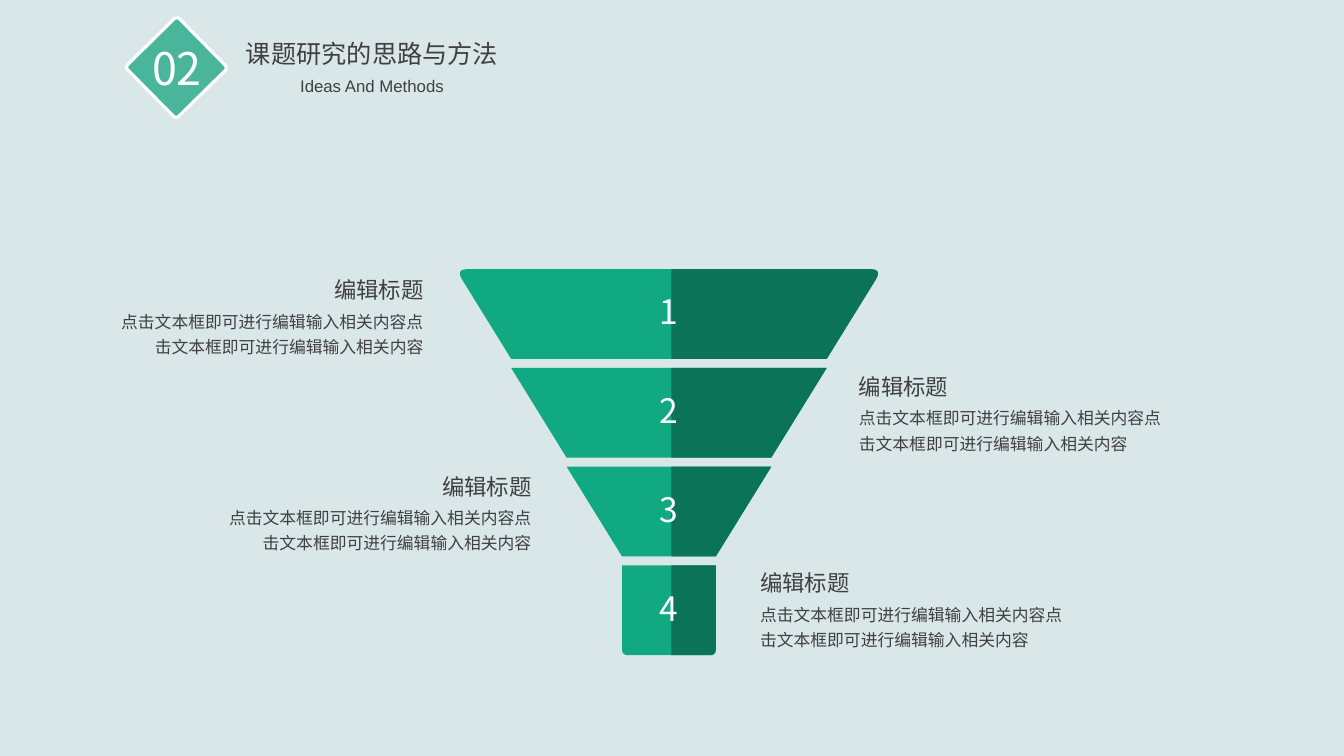
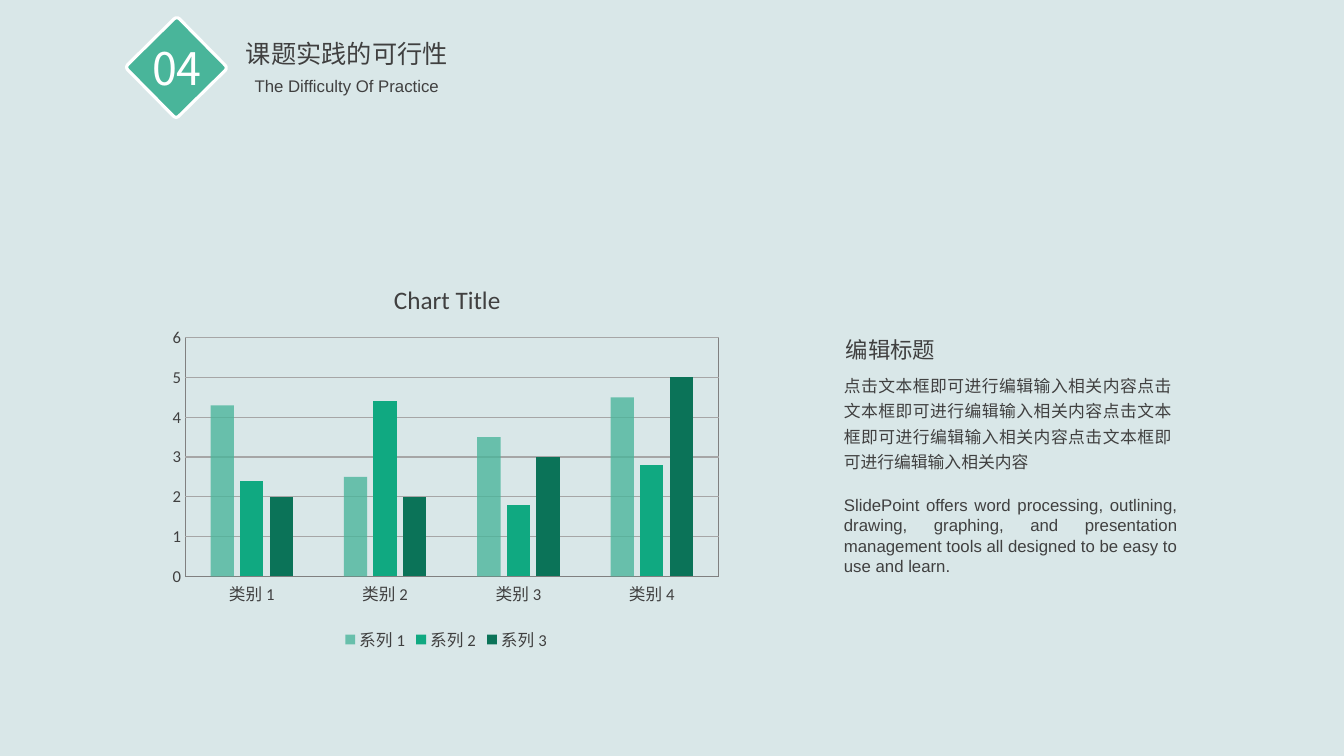
from dataclasses import dataclass

from pptx import Presentation
from pptx.chart.data import CategoryChartData
from pptx.dml.color import RGBColor
from pptx.enum.chart import XL_CHART_TYPE, XL_LEGEND_POSITION, XL_TICK_MARK
from pptx.enum.shapes import MSO_SHAPE
from pptx.enum.text import MSO_ANCHOR, MSO_AUTO_SIZE, PP_ALIGN
from pptx.oxml import parse_xml
from pptx.oxml.ns import nsdecls, qn
from pptx.util import Pt

PX = 9144  # EMU per px, 100 px to the inch
LEFT, CENTER, RIGHT, JUSTIFY = PP_ALIGN.LEFT, PP_ALIGN.CENTER, PP_ALIGN.RIGHT, PP_ALIGN.JUSTIFY
TOP, MIDDLE = MSO_ANCHOR.TOP, MSO_ANCHOR.MIDDLE
NO_FIT = MSO_AUTO_SIZE.NONE
ROUND_RECT = MSO_SHAPE.ROUNDED_RECTANGLE
CLUSTERED = XL_CHART_TYPE.COLUMN_CLUSTERED
LEGEND_BOTTOM = XL_LEGEND_POSITION.BOTTOM
NO_TICK = XL_TICK_MARK.NONE
TITLE_ONLY = 5


@dataclass(frozen=True)
class Theme:
    # Colours
    background: str = "D9E7E8"
    mint: str = "49B59A"
    green: str = "10A981"
    dark: str = "0B7358"
    ink: str = "404040"
    white: str = "FFFFFF"
    axis: str = "808080"
    grid: str = "A6A6A6"
    # Fonts
    cjk: str = "Noto Sans CJK SC"
    latin: str = "Arial"
    chart: str = "Calibri"
    # Type sizes
    number: int = 32
    tier: int = 24
    title: int = 18
    heading: int = 16
    body: int = 12
    axis_size: float = 11.9


THEME = Theme()
PROMPT = "点击文本框即可进行编辑输入相关内容"
HEADING = "编辑标题"


def rgb(value):
    return RGBColor.from_string(value)


def rounded(corners, steps=8):
    """Outline of (x, y, cut) corners, each cut replaced by a quadratic curve."""
    points = []
    for i, (x, y, cut) in enumerate(corners):
        if not cut:
            points.append((x, y))
            continue
        ends = []
        for nx, ny, _ in (corners[i - 1], corners[(i + 1) % len(corners)]):
            ratio = cut / ((nx - x) ** 2 + (ny - y) ** 2) ** 0.5
            ends.append((x + (nx - x) * ratio, y + (ny - y) * ratio))
        (ax, ay), (bx, by) = ends
        for k in range(steps + 1):
            t = k / steps
            a, m, b = (1 - t) ** 2, 2 * t * (1 - t), t * t
            points.append((a * ax + m * x + b * bx, a * ay + m * y + b * by))
    return points


def set_layout(parent, index, target="", **fractions):
    """Place a chart part by fractions of the chart area."""
    for old in parent.findall(qn("c:layout")):
        parent.remove(old)
    modes = "".join(f'<c:{k}Mode val="edge"/>' for k in "xy")
    values = "".join(f'<c:{k} val="{v}"/>' for k, v in fractions.items())
    parent.insert(index, parse_xml(
        f'<c:layout {nsdecls("c")}><c:manualLayout>{target}{modes}{values}'
        '</c:manualLayout></c:layout>'))


class Deck:
    def __init__(self, theme):
        self.theme = theme
        self.prs = Presentation()
        self.prs.slide_width, self.prs.slide_height = 1333 * PX, 750 * PX
        fill = self.prs.slide_master.background.fill
        fill.solid()
        fill.fore_color.rgb = rgb(theme.background)
        self.slide = None

    # Text
    def set_text(self, tf, text, size, color=None, font=None, align=LEFT,
                 spacing=1.0, before=0, anchor=TOP):
        tf.word_wrap = True
        tf.auto_size = NO_FIT
        tf.vertical_anchor = anchor
        p = tf.paragraphs[0]
        p.alignment, p.line_spacing, p.space_before = align, spacing, Pt(before)
        r = p.add_run()
        r.text = text
        r.font.size = Pt(size)
        r.font.name = font or self.theme.cjk
        r.font.color.rgb = rgb(color or self.theme.ink)
        ea = parse_xml(f'<a:ea {nsdecls("a")} typeface="{self.theme.cjk}"/>')
        r.font._element.find(qn("a:latin")).addnext(ea)

    def text(self, x, y, w, h, text, size, inset=True, **style):
        sp = self.slide.shapes.add_textbox(x * PX, y * PX, w * PX, h * PX)
        tf = sp.text_frame
        if not inset:
            tf.margin_left = tf.margin_right = tf.margin_top = tf.margin_bottom = 0
        self.set_text(tf, text, size, **style)

    def caption(self, x, y, align):
        """Heading with a two-line body under it, in a column 335 wide."""
        t = self.theme
        heading_x = x + 335 - 141 if align == RIGHT else x
        self.text(x, y + 30, 335, 61, PROMPT * 2, t.body, align=align, spacing=1.25)
        self.text(heading_x, y, 141, 37, HEADING, t.heading, align=align)

    # Slide with its numbered header
    def new_slide(self, number, title, subtitle, center):
        t = self.theme
        self.slide = self.prs.slides.add_slide(self.prs.slide_layouts[TITLE_ONLY])
        sp = self.slide.shapes.add_shape(ROUND_RECT, 139 * PX, 31 * PX, 72 * PX, 72 * PX)
        sp.adjustments[0] = 0.05
        sp.rotation = 45.4
        sp.shadow.inherit = False
        sp.fill.solid()
        sp.fill.fore_color.rgb = rgb(t.mint)
        sp.line.color.rgb = rgb(t.white)
        sp.line.width = Pt(2.25)
        self.text(137, 35, 77, 64, number, t.number, color=t.white, align=CENTER)

        sp = self.slide.shapes.title
        sp.left, sp.top, sp.width, sp.height = (
            (center - 271) * PX, 33 * PX, 542 * PX, 40 * PX)
        self.set_text(sp.text_frame, title, t.title, align=CENTER)
        self.text(center - 274, 70, 548, 30, subtitle, t.body, font=t.latin, align=CENTER)

    # Shapes
    def outline(self, corners, color):
        points = [(round(x * PX), round(y * PX)) for x, y in rounded(corners)]
        builder = self.slide.shapes.build_freeform(*points[0], scale=1.0)
        builder.add_line_segments(points[1:], close=True)
        sp = builder.convert_to_shape()
        sp.shadow.inherit = False
        sp.fill.solid()
        sp.fill.fore_color.rgb = rgb(color)
        sp.line.fill.background()

    def funnel(self, left, right, fold, top, count):
        """Tiers that narrow by one step each; the last one is straight."""
        t = self.theme
        step, pitch, height = 55, 98, 89
        for i in range(count):
            last = i == count - 1
            y = top + i * pitch
            bottom = y + height
            x1, x2 = left + i * step, right - i * step
            inset = 0 if last else step
            top_cut, bottom_cut = (0 if i else 12), (6 if last else 0)
            right_side = [(x2, y, top_cut), (x2 - inset, bottom, bottom_cut)]
            self.outline([(x1, y, top_cut), *right_side,
                          (x1 + inset, bottom, bottom_cut)], t.green)
            self.outline([(fold, y, 0), *right_side, (fold, bottom, 0)], t.dark)
            self.text(614, y, 99, height, str(i + 1), t.tier, color=t.white,
                      align=CENTER, spacing=0.9, before=10, anchor=MIDDLE)

    # Chart
    def chart_font(self, font, size):
        font.size = Pt(size)
        font.name = self.theme.chart
        font.color.rgb = rgb(self.theme.ink)

    def column_chart(self, x, y, w, h, title, categories, series):
        t = self.theme
        data = CategoryChartData()
        data.categories = categories
        for name, values, _ in series:
            data.add_series(name, values)
        chart = self.slide.shapes.add_chart(
            CLUSTERED, x * PX, y * PX, w * PX, h * PX, data).chart
        self.chart_font(chart.font, t.axis_size)

        # Title and legend
        p = chart.chart_title.text_frame.paragraphs[0]
        r = p.add_run()
        r.text = title
        r.font.bold = False
        self.chart_font(r.font, t.title)
        chart.chart_title.include_in_layout = False
        set_layout(chart.element.find(".//" + qn("c:title")), 1, x=0.4, y=0.05)
        chart.has_legend = True
        chart.legend.position = LEGEND_BOTTOM
        chart.legend.include_in_layout = False
        self.chart_font(chart.legend.font, t.axis_size)

        # Axes
        for axis in (chart.category_axis, chart.value_axis):
            axis.major_tick_mark = axis.minor_tick_mark = NO_TICK
            self.chart_font(axis.tick_labels.font, t.axis_size)
        value = chart.value_axis
        value.minimum_scale, value.maximum_scale, value.major_unit = 0, 6, 1
        value.format.line.fill.background()
        value.has_major_gridlines = True
        for line, color in ((chart.category_axis.format.line, t.axis),
                            (value.major_gridlines.format.line, t.grid)):
            line.color.rgb = rgb(color)
            line.width = Pt(0.75)

        # Plot area and its frame
        area = chart.element.find(".//" + qn("c:plotArea"))
        set_layout(area, 0, '<c:layoutTarget val="inner"/>', x=0.04, y=0.2, w=0.94, h=0.6)
        area.append(parse_xml(
            f'<c:spPr {nsdecls("c", "a")}><a:noFill/><a:ln w="9525"><a:solidFill>'
            f'<a:srgbClr val="{t.axis}"/></a:solidFill></a:ln></c:spPr>'))

        # Series
        plot = chart.plots[0]
        plot.gap_width, plot.overlap, plot.vary_by_categories = 219, -27, False
        for s, (_, _, (color, opacity)) in zip(plot.series, series):
            s.format.fill.solid()
            s.format.fill.fore_color.rgb = rgb(color)
            if opacity < 100:
                clr = s.format.fill._xPr.find(".//" + qn("a:srgbClr"))
                clr.append(parse_xml(f'<a:alpha {nsdecls("a")} val="{opacity * 1000}"/>'))


def main():
    deck = Deck(THEME)

    # Funnel slide
    deck.new_slide("02", "课题研究的思路与方法", "Ideas And Methods", 369)
    deck.funnel(left=452, right=875, fold=666, top=267, count=4)
    for x, y, align in ((95, 269, RIGHT), (842, 365, LEFT),
                        (202, 464, RIGHT), (744, 560, LEFT)):
        deck.caption(x, y, align)

    # Chart slide
    deck.new_slide("04", "课题实践的可行性", "The Difficulty Of Practice", 344)
    deck.column_chart(
        161, 256, 563, 395, "Chart Title", [f"类别 {i}" for i in range(1, 5)],
        [("系列 1", (4.3, 2.5, 3.5, 4.5), (THEME.mint, 78)),
         ("系列 2", (2.4, 4.4, 1.8, 2.8), (THEME.green, 100)),
         ("系列 3", (2, 2, 3, 5), (THEME.dark, 100))])
    deck.text(827, 363, 345, 111, PROMPT * 4, THEME.body, align=JUSTIFY, spacing=1.25)
    deck.text(829, 329, 149, 37, HEADING, THEME.heading)
    deck.text(837, 491, 331, 81,
              "SlidePoint offers word processing, outlining, drawing, graphing, and "
              "presentation management tools all designed to be easy to use and learn.",
              THEME.body, inset=False, font=THEME.latin, align=JUSTIFY)

    deck.prs.save("out.pptx")


if __name__ == "__main__":
    main()
